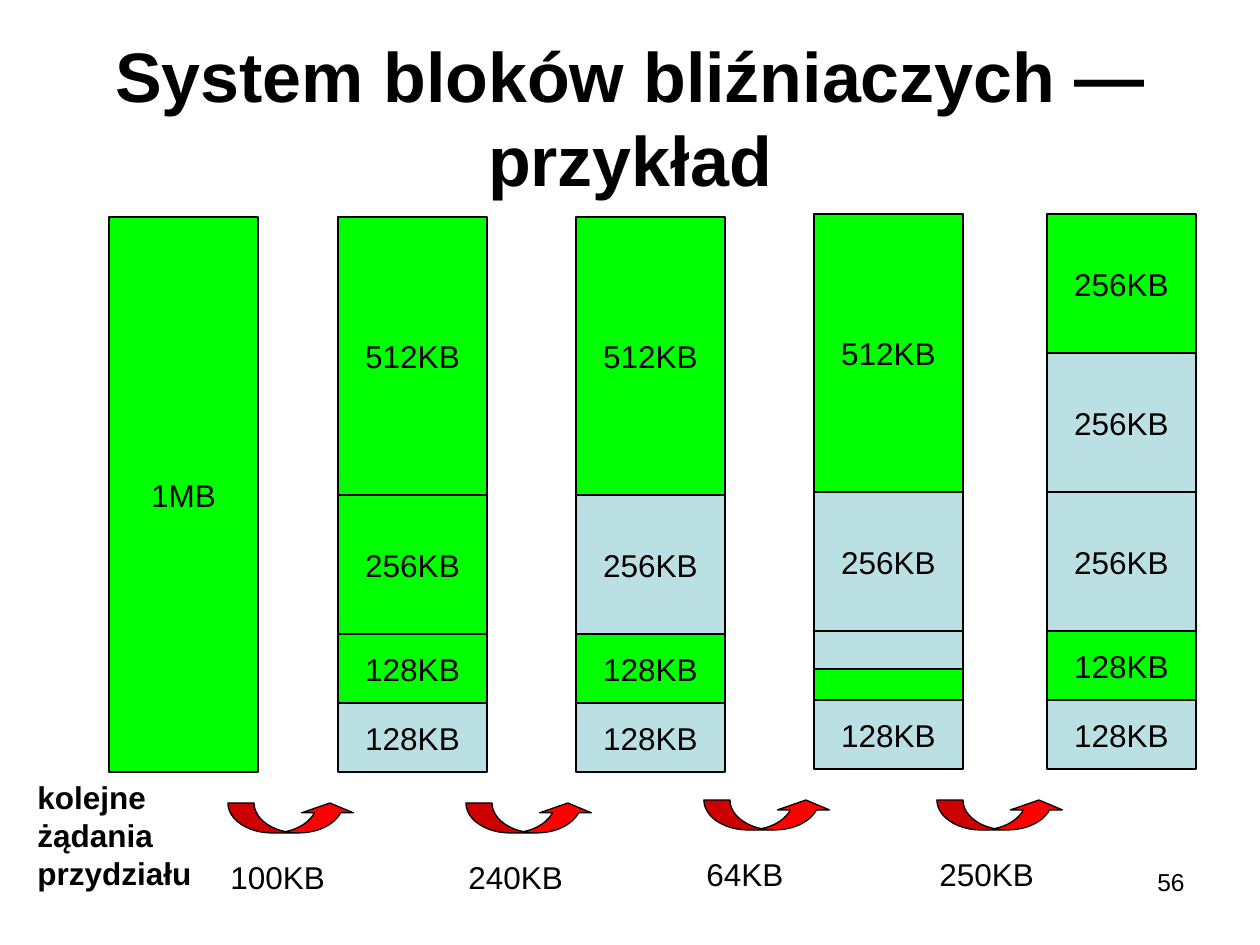
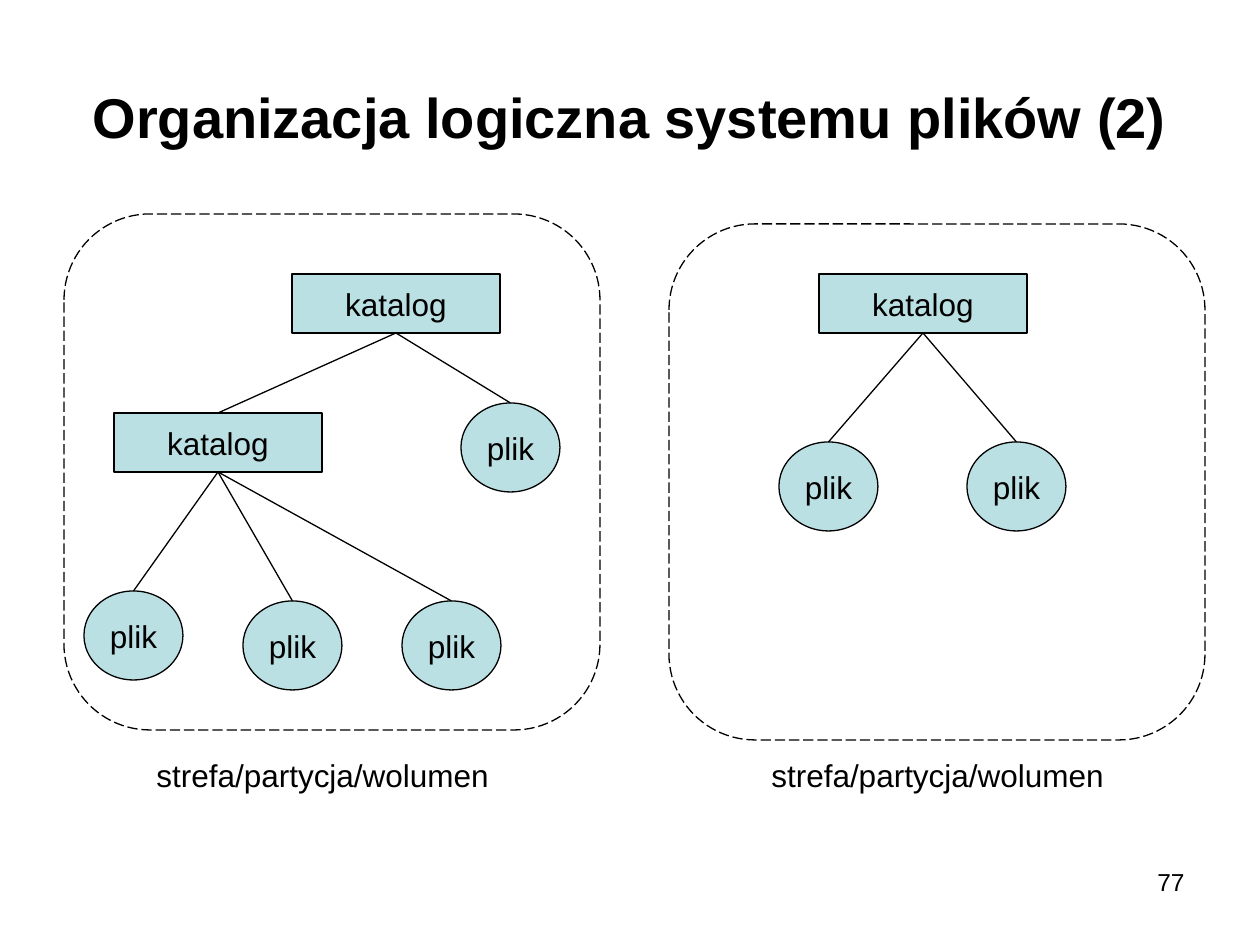
from lxml import etree
from pptx import Presentation
from pptx.dml.color import RGBColor
from pptx.enum.dml import MSO_LINE
from pptx.enum.shapes import MSO_CONNECTOR, MSO_SHAPE
from pptx.enum.text import MSO_ANCHOR, MSO_AUTO_SIZE, PP_ALIGN
from pptx.oxml.ns import qn
from pptx.util import Pt

PX = 914400 // 126
SLIDE_SIZE = (9144000, 6858000)
TITLE_ONLY = 5
RECT = MSO_SHAPE.RECTANGLE
ELLIPSE = MSO_SHAPE.OVAL
ROUNDED = MSO_SHAPE.ROUNDED_RECTANGLE
CURVED_ARROW = MSO_SHAPE.CURVED_UP_ARROW
STRAIGHT = MSO_CONNECTOR.STRAIGHT
LONG_DASH = MSO_LINE.LONG_DASH
LEFT, CENTER, RIGHT = PP_ALIGN.LEFT, PP_ALIGN.CENTER, PP_ALIGN.RIGHT
TOP, MIDDLE = MSO_ANCHOR.TOP, MSO_ANCHOR.MIDDLE
NO_AUTOFIT = MSO_AUTO_SIZE.NONE

FONT = "Arial"
BLACK, FREE, USED, RED = "000000", "00FF00", "BBE0E3", "FF0000"
LINE_WIDTH = Pt(0.75)
TOP_SITE, BOTTOM_SITE = 0, 2

BLOCK_WIDTH = 149
WHOLE = ("1MB", 555)
HALF = ("512KB", 278)
QUARTER = ("256KB", 139)
EIGHTH = ("128KB", 69)
UPPER_SPLIT = ("", 38)
LOWER_SPLIT = ("", 31)

MEMORY_STATES = [
    (109, 217, "", [(WHOLE, FREE)]),
    (338, 217, "100KB", [(HALF, FREE), (QUARTER, FREE), (EIGHTH, FREE), (EIGHTH, USED)]),
    (576, 217, "240KB", [(HALF, FREE), (QUARTER, USED), (EIGHTH, FREE), (EIGHTH, USED)]),
    (814, 214, "64KB", [(HALF, FREE), (QUARTER, USED), (UPPER_SPLIT, USED),
                        (LOWER_SPLIT, FREE), (EIGHTH, USED)]),
    (1047, 214, "250KB", [(QUARTER, FREE), (QUARTER, USED), (QUARTER, USED),
                          (EIGHTH, FREE), (EIGHTH, USED)]),
]


def px(*lengths):
    return [length * PX for length in lengths]


def color(hex_code):
    return RGBColor.from_string(hex_code)


def write(frame, text, size=18, bold=False, align=LEFT, anchor=TOP, wrap=True):
    frame.auto_size = NO_AUTOFIT
    frame.word_wrap = wrap
    frame.vertical_anchor = anchor
    for index, line in enumerate(text.split("\n")):
        paragraph = frame.add_paragraph() if index else frame.paragraphs[0]
        paragraph.text = line
        paragraph.alignment = align
        paragraph.font.name = FONT
        paragraph.font.size = Pt(size)
        paragraph.font.bold = bold
        paragraph.font.color.rgb = color(BLACK)


def outline(line):
    line.color.rgb = color(BLACK)
    line.width = LINE_WIDTH


def add_label(slide, box, text, **style):
    label = slide.shapes.add_textbox(*px(*box))
    write(label.text_frame, text, **style)


def add_figure(slide, kind, box, fill=None, text=""):
    figure = slide.shapes.add_shape(kind, *px(*box))
    figure.shadow.inherit = False
    outline(figure.line)
    if fill:
        figure.fill.solid()
        figure.fill.fore_color.rgb = color(fill)
    else:
        figure.fill.background()
    if text:
        write(figure.text_frame, text, align=CENTER, anchor=MIDDLE, wrap=False)
    return figure


def add_titled_slide(deck, title, title_size, number):
    slide = deck.slides.add_slide(deck.slide_layouts[TITLE_ONLY])
    heading = slide.shapes.title
    heading.left, heading.top, heading.width, heading.height = px(63, 38, 1134, 157)
    write(heading.text_frame, title, title_size, True, CENTER, MIDDLE)
    add_label(slide, (903, 861, 294, 66), number, size=14, align=RIGHT)
    return slide


def add_memory_column(slide, left, top, blocks):
    for (label, height), fill in blocks:
        add_figure(slide, RECT, (left, top, BLOCK_WIDTH, height), fill, label)
        top += height


def add_request(slide, column_left, column_top, amount):
    arrow = add_figure(slide, CURVED_ARROW, (column_left - 110, column_top + 586, 128, 30), RED)
    for index, value in enumerate((0.87, 1.73, 0.33)):
        arrow.adjustments[index] = value
    add_label(slide, (column_left - 120, column_top + 635, 139, 50), amount)


def add_directory(slide, left, top):
    return add_figure(slide, RECT, (left, top, 208, 59), USED, "katalog")


def add_file(slide, left, top):
    return add_figure(slide, ELLIPSE, (left, top, 99, 89), USED, "plik")


def link(slide, parent, children):
    for child in children:
        branch = slide.shapes.add_connector(STRAIGHT, 0, 0, 0, 0)
        branch.begin_connect(parent, BOTTOM_SITE)
        branch.end_connect(child, TOP_SITE)
        outline(branch.line)
        etree.SubElement(branch.element.spPr, qn("a:effectLst"))


def add_volume(slide, left, top, caption_left):
    border = add_figure(slide, ROUNDED, (left, top, 536, 516))
    border.line.dash_style = LONG_DASH
    add_label(slide, (caption_left, 750, 377, 50), "strefa/partycja/wolumen")


def build_buddy_slide(deck):
    slide = add_titled_slide(deck, "System bloków bliźniaczych — przykład", 40, "56")
    add_label(slide, (25, 772, 184, 126), "kolejne\nżądania\nprzydziału", bold=True)
    for left, top, request, blocks in MEMORY_STATES:
        add_memory_column(slide, left, top, blocks)
        if request:
            add_request(slide, left, top, request)


def build_file_system_slide(deck):
    slide = add_titled_slide(deck, "Organizacja logiczna systemu plików (2)", 32, "77")
    add_volume(slide, 64, 214, 144)
    add_volume(slide, 669, 224, 759)

    left_root = add_directory(slide, 292, 274)
    subdirectory = add_directory(slide, 114, 413)
    link(slide, left_root, [subdirectory, add_file(slide, 461, 403)])
    nested_files = [add_file(slide, left, top) for left, top in ((84, 591), (243, 601), (402, 601))]
    link(slide, subdirectory, nested_files)

    right_root = add_directory(slide, 819, 274)
    link(slide, right_root, [add_file(slide, left, 442) for left in (779, 967)])


def main():
    deck = Presentation()
    deck.slide_width, deck.slide_height = SLIDE_SIZE
    build_buddy_slide(deck)
    build_file_system_slide(deck)
    deck.save("out.pptx")


if __name__ == "__main__":
    main()
